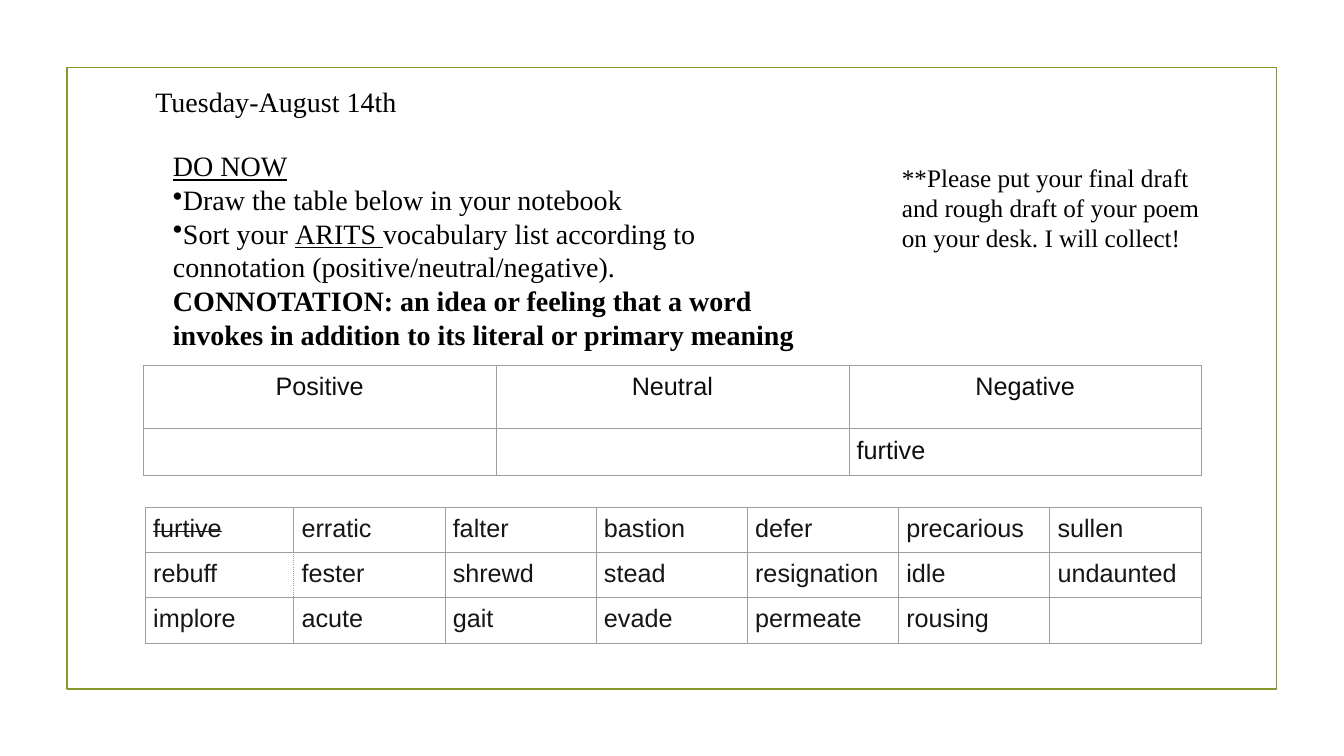
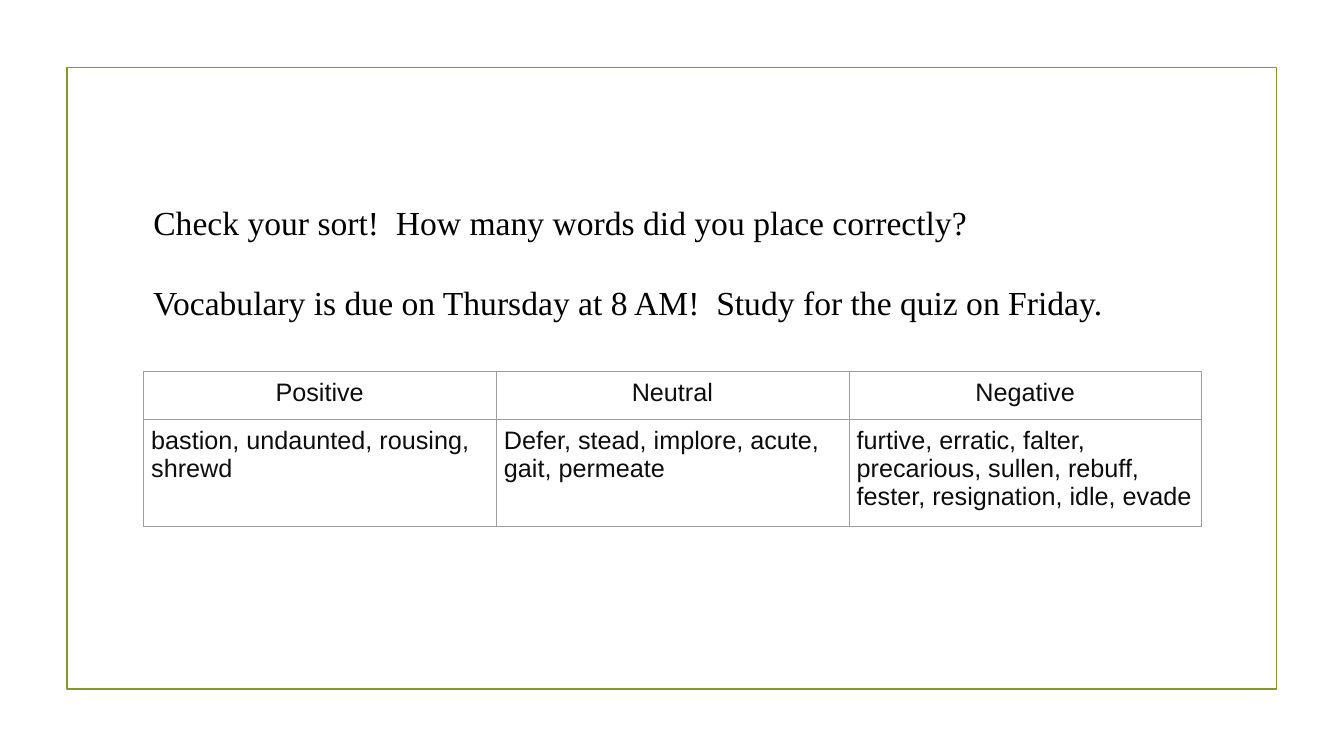
import pptx
import pptx.dml.color
import pptx.enum.shapes
import pptx.enum.text
import pptx.oxml
import pptx.oxml.ns
import pptx.util

Cm, Pt = pptx.util.Cm, pptx.util.Pt
qn = pptx.oxml.ns.qn
ALIGN = pptx.enum.text.PP_ALIGN

COLORS = {"text": "000000", "sort": "0D0D0D", "word": "161616",
          "grid": "9E9E9E", "frame": "83992A"}
SERIF, SANS = "Times New Roman", "Arial"
TITLE_ONLY = 5

SORT_HEADS = ["Positive", "Neutral", "Negative"]
SORT_START = ["", "", "furtive"]
SORT_ANSWERS = [
    "bastion, undaunted, rousing, shrewd",
    "Defer, stead, implore, acute, gait, permeate",
    "furtive, erratic, falter, precarious, sullen, rebuff, fester, resignation, idle, evade",
]
WORDS = [
    ["furtive", "erratic", "falter", "bastion", "defer", "precarious", "sullen"],
    ["rebuff", "fester", "shrewd", "stead", "resignation", "idle", "undaunted"],
    ["implore", "acute", "gait", "evade", "permeate", "rousing", ""],
]
USED_WORD = "furtive"
DOTTED_EDGES = {("rebuff", "R"), ("fester", "L")}

DATE = "Tuesday-August 14th"
DO_NOW = [
    (False, [("DO NOW", {"underline": True})]),
    (True, [("Draw the table below in your notebook", {})]),
    (True, [("Sort your ", {}), ("ARITS ", {"underline": True}),
            ("vocabulary list according to connotation (positive/neutral/negative).", {})]),
    (False, [("CONNOTATION: an idea or feeling that a word invokes in addition to "
              "its literal or primary meaning", {"bold": True})]),
]
COLLECT = ("**Please put your final draft and rough draft of your poem on your desk. "
           "I will collect!")
CHECK = "Check your sort!  How many words did you place correctly?"
DUE = "Vocabulary is due on Thursday at 8 AM!  Study for the quiz on Friday."

SORT_LEFT, SORT_COL = 3.61, 8.89
WORD_LEFT, WORD_COLS = 3.66, [3.74] + [3.81] * 6
ROW = 1.13
PAD = 0.2


def rgb(name):
    return pptx.dml.color.RGBColor.from_string(COLORS[name])


def write(p, text, size=18, font=SERIF, color="text", bold=False,
          underline=False, strike=False):
    r = p.add_run()
    r.text = text
    r.font.size = Pt(size)
    r.font.name = font
    r.font.color.rgb = rgb(color)
    r.font.bold = bold
    r.font.underline = underline
    if strike:
        r._r.get_or_add_rPr().set("strike", "sngStrike")


def add_bullet(p):
    pPr = p._p.get_or_add_pPr()
    pPr.set("marL", "0")
    pPr.set("indent", "0")
    pPr.append(pptx.oxml.parse_xml(
        f'<a:buChar {pptx.oxml.ns.nsdecls("a")} char="•"/>'))


def add_box(s, left, top, width, height):
    sp = s.shapes.add_textbox(Cm(left), Cm(top), Cm(width), Cm(height))
    sp.text_frame.word_wrap = True
    return sp.text_frame


def add_title(s, text, left, top, width, height, size):
    sp = s.shapes.title
    sp.left, sp.top, sp.width, sp.height = map(Cm, (left, top, width, height))
    tf = sp.text_frame
    tf.auto_size = pptx.enum.text.MSO_AUTO_SIZE.NONE
    tf.vertical_anchor = pptx.enum.text.MSO_ANCHOR.TOP
    tf.paragraphs[0].alignment = ALIGN.LEFT
    write(tf.paragraphs[0], text, size=size)


def add_borders(cell, text):
    tcPr = cell._tc.get_or_add_tcPr()
    for i, edge in enumerate("LRTB"):
        dash = "dot" if (text, edge) in DOTTED_EDGES else "solid"
        tcPr.insert(i, pptx.oxml.parse_xml(
            f'<a:ln{edge} {pptx.oxml.ns.nsdecls("a")} w="{Pt(0.3)}"><a:solidFill>'
            f'<a:srgbClr val="{COLORS["grid"]}"/></a:solidFill>'
            f'<a:prstDash val="{dash}"/></a:ln{edge}>'))


def add_grid(s, rows, left, top, widths, heights, color, header=False, struck=None):
    table = s.shapes.add_table(
        len(rows), len(widths), Cm(left), Cm(top),
        Cm(sum(widths)), Cm(sum(heights))).table
    table.first_row = table.horz_banding = False
    for column, width in zip(table.columns, widths):
        column.width = Cm(width)
    for i, (texts, height) in enumerate(zip(rows, heights)):
        table.rows[i].height = Cm(height)
        for j, text in enumerate(texts):
            cell = table.cell(i, j)
            cell.margin_left = cell.margin_right = Cm(PAD)
            cell.margin_top = cell.margin_bottom = Cm(PAD)
            cell.fill.background()
            add_borders(cell, text)
            p = cell.text_frame.paragraphs[0]
            if header and i == 0:
                p.alignment = ALIGN.CENTER
            if text:
                write(p, text, font=SANS, color=color, strike=text == struck)


def add_sort_table(s, answers, top, heights):
    add_grid(s, [SORT_HEADS, answers], SORT_LEFT, top,
             [SORT_COL] * len(SORT_HEADS), heights, "sort", header=True)


def add_frame(s):
    sp = s.shapes.add_shape(pptx.enum.shapes.MSO_SHAPE.RECTANGLE,
                            Cm(1.69), Cm(1.7), Cm(30.48), Cm(15.67))
    sp.shadow.inherit = False
    sp.fill.background()
    sp.line.color.rgb = rgb("frame")
    sp.line.width = Pt(1.25)
    s.slide_layout.shapes._spTree.insert(2, sp._element)


def build_do_now(s):
    add_grid(s, WORDS, WORD_LEFT, 12.78, WORD_COLS, [ROW] * len(WORDS),
             "word", struck=USED_WORD)
    add_sort_table(s, SORT_START, 9.2, [1.6, ROW])
    tf = add_box(s, 4.11, 3.63, 16.69, 5.4)
    for i, (bulleted, runs) in enumerate(DO_NOW):
        p = tf.add_paragraph() if i else tf.paragraphs[0]
        if bulleted:
            add_bullet(p)
        for text, style in runs:
            write(p, text, size=20, **style)
    add_title(s, DATE, 3.66, 2, 24.43, 1.11, 20)
    write(add_box(s, 22.48, 3.96, 8.43, 2.57).paragraphs[0], COLLECT)


def build_check(s):
    width = SORT_COL * len(SORT_HEADS)
    add_sort_table(s, SORT_ANSWERS, 9.35, [1.2, 2.72])
    add_title(s, CHECK, SORT_LEFT, 4.95, width, 1.28, 24)
    write(add_box(s, SORT_LEFT, 6.97, width, 1.28).paragraphs[0], DUE, size=24)


def main():
    prs = pptx.Presentation()
    prs.slide_width, prs.slide_height = Cm(33.87), Cm(19.05)
    layout = prs.slide_layouts[TITLE_ONLY]
    slides = [prs.slides.add_slide(layout) for _ in range(2)]
    add_frame(slides[0])
    build_do_now(slides[0])
    build_check(slides[1])
    prs.save("out.pptx")


if __name__ == "__main__":
    main()
